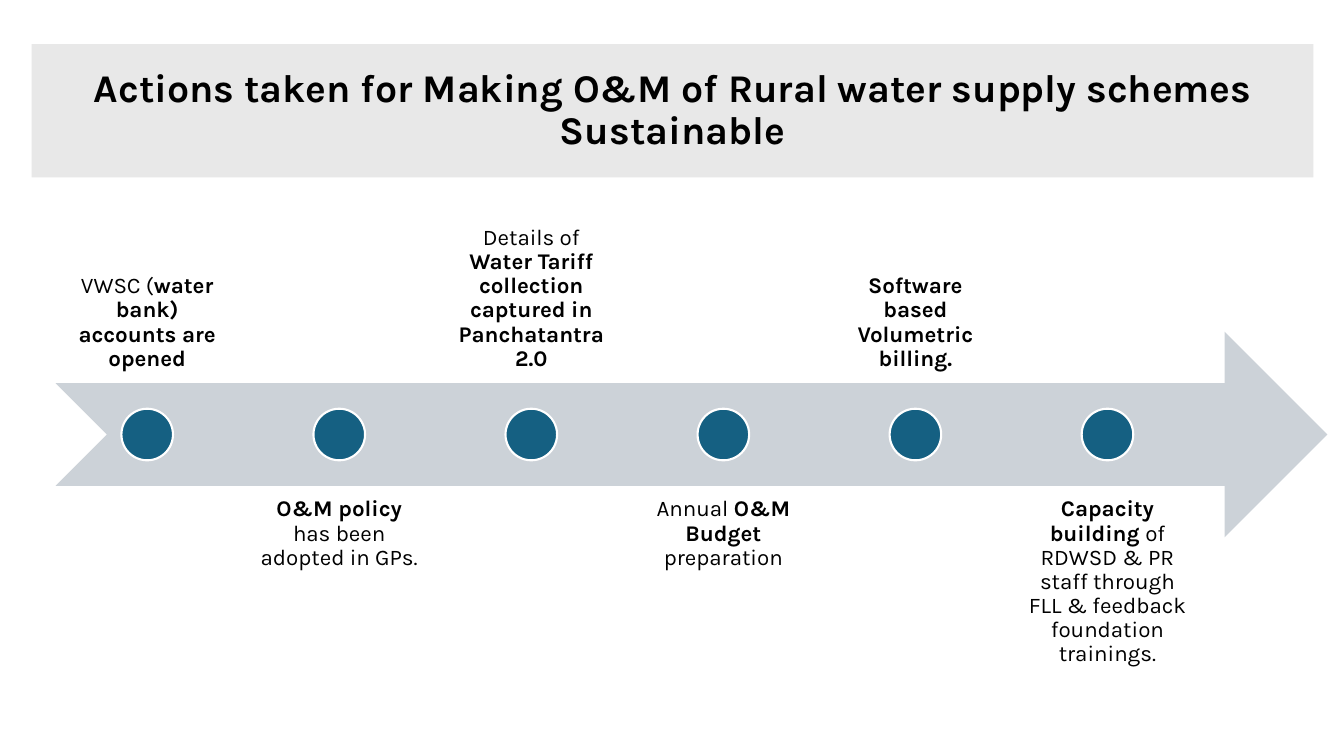
import pptx
import pptx.dml.color
import pptx.enum.shapes
import pptx.enum.text
import pptx.util
from dataclasses import dataclass
from pptx.util import Cm


@dataclass(frozen=True)
class Theme:
    font: str = "Karla"
    text: str = "000000"
    banner: str = "E8E8E8"
    arrow: str = "CCD2D8"
    dot: str = "156082"
    outline: str = "FFFFFF"
    title_size: int = 28
    label_size: int = 16


theme = Theme()
rgb = pptx.dml.color.RGBColor.from_string
shape_type = pptx.enum.shapes.MSO_SHAPE
anchor = pptx.enum.text.MSO_ANCHOR


def add_filled_shape(shapes, kind, box, color):
    shape = shapes.add_shape(kind, *[Cm(length) for length in box])
    shape.shadow.inherit = False
    shape.fill.solid()
    shape.fill.fore_color.rgb = rgb(color)
    shape.line.fill.background()
    return shape


def write_text(shape, pieces, size, vertical_anchor):
    """Fill a shape with one centred paragraph of (text, bold) pieces."""
    frame = shape.text_frame
    frame.word_wrap = True
    frame.vertical_anchor = vertical_anchor
    paragraph = frame.paragraphs[0]
    paragraph.alignment = pptx.enum.text.PP_ALIGN.CENTER
    paragraph.line_spacing = 0.9
    for text, bold in pieces:
        run = paragraph.add_run()
        run.text = text
        run.font.name = theme.font
        run.font.size = pptx.util.Pt(size)
        run.font.bold = bold
        run.font.color.rgb = rgb(theme.text)


presentation = pptx.Presentation()
presentation.slide_width = Cm(33.87)
presentation.slide_height = Cm(19.05)
slide = presentation.slides.add_slide(presentation.slide_layouts[6])

# Title banner
banner = add_filled_shape(slide.shapes, shape_type.RECTANGLE,
                          (0.8, 1.11, 32.3, 3.36), theme.banner)
title = "Actions taken for Making O&M of Rural water supply schemes Sustainable"
write_text(banner, [(title, True)], theme.title_size, anchor.MIDDLE)

# Timeline arrow
left, arrow_top, band_height = 1.4, 8.36, 5.18
timeline = slide.shapes.add_group_shape()
add_filled_shape(timeline.shapes, shape_type.NOTCHED_RIGHT_ARROW,
                 (left, arrow_top, 32.05, band_height), theme.arrow)

# Actions: labels alternate above and below the arrow, each with a dot
actions = [
    [("VWSC (", False), ("water bank) accounts are opened", True)],
    [("O&M policy ", True), ("has been adopted in GPs.", False)],
    [("Details of ", False),
     ("Water Tariff collection captured in Panchatantra 2.0", True)],
    [("Annual ", False), ("O&M Budget ", True), ("preparation", False)],
    [("Software based Volumetric billing.", True)],
    [("Capacity building ", True),
     ("of RDWSD & PR staff through FLL & feedback foundation trainings.", False)],
]
label_width, label_step, dot_size = 4.62, 4.84, 1.3
above_top, below_top = 4.47, 12.24
dot_top = arrow_top + (band_height - dot_size) / 2

for index, pieces in enumerate(actions):
    above = index % 2 == 0
    label_left = left + index * label_step
    label = timeline.shapes.add_textbox(
        Cm(label_left), Cm(above_top if above else below_top),
        Cm(label_width), Cm(band_height))
    frame = label.text_frame
    frame.margin_left = frame.margin_right = Cm(0.3)
    frame.margin_top = frame.margin_bottom = Cm(0.3)
    write_text(label, pieces, theme.label_size,
               anchor.BOTTOM if above else anchor.TOP)

    dot_left = label_left + (label_width - dot_size) / 2
    dot = add_filled_shape(timeline.shapes, shape_type.OVAL,
                           (dot_left, dot_top, dot_size, dot_size), theme.dot)
    dot.line.color.rgb = rgb(theme.outline)
    dot.line.width = pptx.util.Pt(1.5)

presentation.save("out.pptx")
